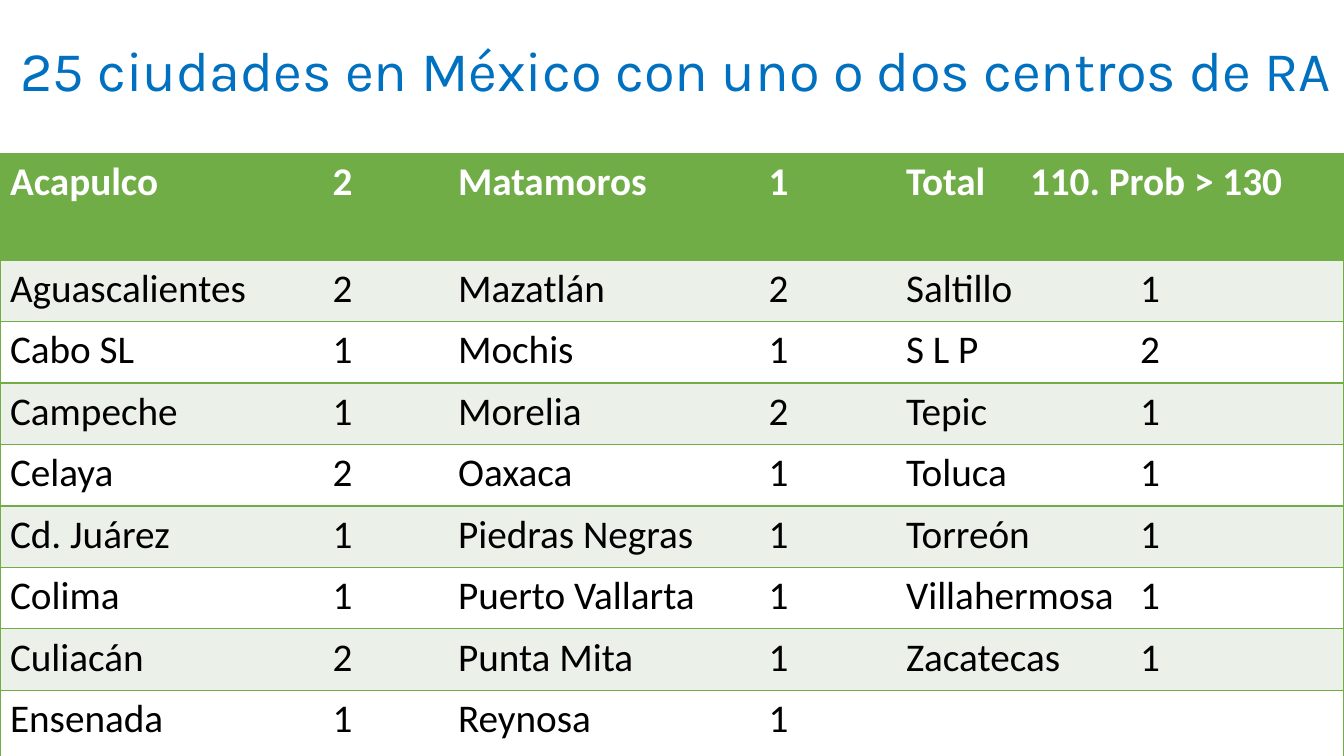
from dataclasses import dataclass

from lxml.etree import SubElement
from pptx import Presentation
from pptx.dml.color import RGBColor
from pptx.enum.text import MSO_ANCHOR
from pptx.oxml.ns import qn
from pptx.util import Inches, Pt


@dataclass(frozen=True)
class Theme:
    title_font: str = "Karla"
    table_font: str = "Calibri"
    title_size: int = 40
    table_size: int = 28
    border_width: int = 1
    title: str = "0070C0"
    green: str = "70AD47"
    band: str = "EBF1E9"
    white: str = "FFFFFF"
    black: str = "000000"


TITLE = "25 ciudades en México con uno o dos centros de RA"
SLIDE_WIDTH, SLIDE_HEIGHT = 13.33, 7.5
TITLE_HEIGHT, TABLE_TOP = 1.45, 1.52
HEADER_HEIGHT, ROW_HEIGHT, LAST_HEIGHT = 1.06, 0.61, 1.1
COUNT_TABS = (3.2, 3.08, 2.32)
TOTAL_TAB = 1.23

CITY_COLUMNS = (
    (("Acapulco", "2"), ("Aguascalientes", "2"), ("Cabo SL", "1"),
     ("Campeche", "1"), ("Celaya", "2"), ("Cd. Juárez", "1"),
     ("Colima", "1"), ("Culiacán", "2"), ("Ensenada", "1")),
    (("Matamoros", "1"), ("Mazatlán", "2"), ("Mochis", "1"),
     ("Morelia", "2"), ("Oaxaca", "1"), ("Piedras Negras", "1"),
     ("Puerto Vallarta", "1"), ("Punta Mita", "1"), ("Reynosa", "1")),
    (("Total", "110. Prob > 130"), ("Saltillo", "1"), ("S L P", "2"),
     ("Tepic", "1"), ("Toluca", "1"), ("Torreón", "1"),
     ("Villahermosa", "1"), ("Zacatecas", "1"), None),
)


class SlideBuilder:
    def __init__(self, slide, theme):
        self.slide = slide
        self.theme = theme

    def add_run(self, paragraph, text, font, size, color, bold=False):
        run = paragraph.add_run()
        run.text = text
        run.font.name = font
        run.font.size = Pt(size)
        run.font.bold = bold
        run.font.color.rgb = RGBColor.from_string(color)

    def add_title(self, text):
        left = 0.015 * SLIDE_WIDTH
        box = self.slide.shapes.add_textbox(
            Inches(left), 0, Inches(SLIDE_WIDTH - left), Inches(TITLE_HEIGHT))
        frame = box.text_frame
        frame.word_wrap = True
        frame.vertical_anchor = MSO_ANCHOR.MIDDLE
        frame.margin_left = frame.margin_right = 0
        paragraph = frame.paragraphs[0]
        paragraph.line_spacing = 0.9
        theme = self.theme
        self.add_run(paragraph, text, theme.title_font, theme.title_size, theme.title)

    def add_border(self, cell, side, color):
        """Draw one side (L, R, T or B); a color of None hides it."""
        properties = cell._tc.get_or_add_tcPr()
        line = SubElement(properties, qn(f"a:ln{side}"),
                          w=str(Pt(self.theme.border_width)))
        if color is None:
            SubElement(line, qn("a:noFill"))
        else:
            fill = SubElement(line, qn("a:solidFill"))
            SubElement(fill, qn("a:srgbClr"), val=color)

    def add_tab_stop(self, paragraph, position):
        tabs = SubElement(paragraph._p.get_or_add_pPr(), qn("a:tabLst"))
        SubElement(tabs, qn("a:tab"), pos=str(Inches(position)), algn="l")

    def fill_cell(self, cell, entry, tab, fill, is_header):
        theme = self.theme
        cell.fill.solid()
        cell.fill.fore_color.rgb = RGBColor.from_string(fill)
        if entry is None:
            return
        paragraph = cell.text_frame.paragraphs[0]
        self.add_tab_stop(paragraph, tab)
        color = theme.white if is_header else theme.black
        self.add_run(paragraph, "\t".join(entry), theme.table_font,
                     theme.table_size, color, is_header)

    def add_city_table(self, columns):
        theme = self.theme
        column_count, row_count = len(columns), len(columns[0])
        heights = [HEADER_HEIGHT, *[ROW_HEIGHT] * (row_count - 2), LAST_HEIGHT]
        table = self.slide.shapes.add_table(
            row_count, column_count, 0, Inches(TABLE_TOP),
            Inches(SLIDE_WIDTH), Inches(sum(heights))).table
        table.horz_banding = False
        for row, height in zip(table.rows, heights):
            row.height = Inches(height)
        for column_index, entries in enumerate(columns):
            is_first = column_index == 0
            is_last = column_index == column_count - 1
            for row_index, entry in enumerate(entries):
                cell = table.cell(row_index, column_index)
                is_header = row_index == 0
                self.add_border(cell, "L", theme.green if is_first else None)
                self.add_border(cell, "R", theme.green if is_last else None)
                self.add_border(cell, "T", theme.green)
                self.add_border(cell, "B", theme.green)
                band = theme.band if row_index % 2 else theme.white
                fill = theme.green if is_header else band
                tab = TOTAL_TAB if is_header and is_last else COUNT_TABS[column_index]
                self.fill_cell(cell, entry, tab, fill, is_header)


def main():
    presentation = Presentation()
    presentation.slide_width = Inches(SLIDE_WIDTH)
    presentation.slide_height = Inches(SLIDE_HEIGHT)
    slide = presentation.slides.add_slide(presentation.slide_layouts[6])
    builder = SlideBuilder(slide, Theme())
    builder.add_title(TITLE)
    builder.add_city_table(CITY_COLUMNS)
    presentation.save("out.pptx")


if __name__ == "__main__":
    main()
